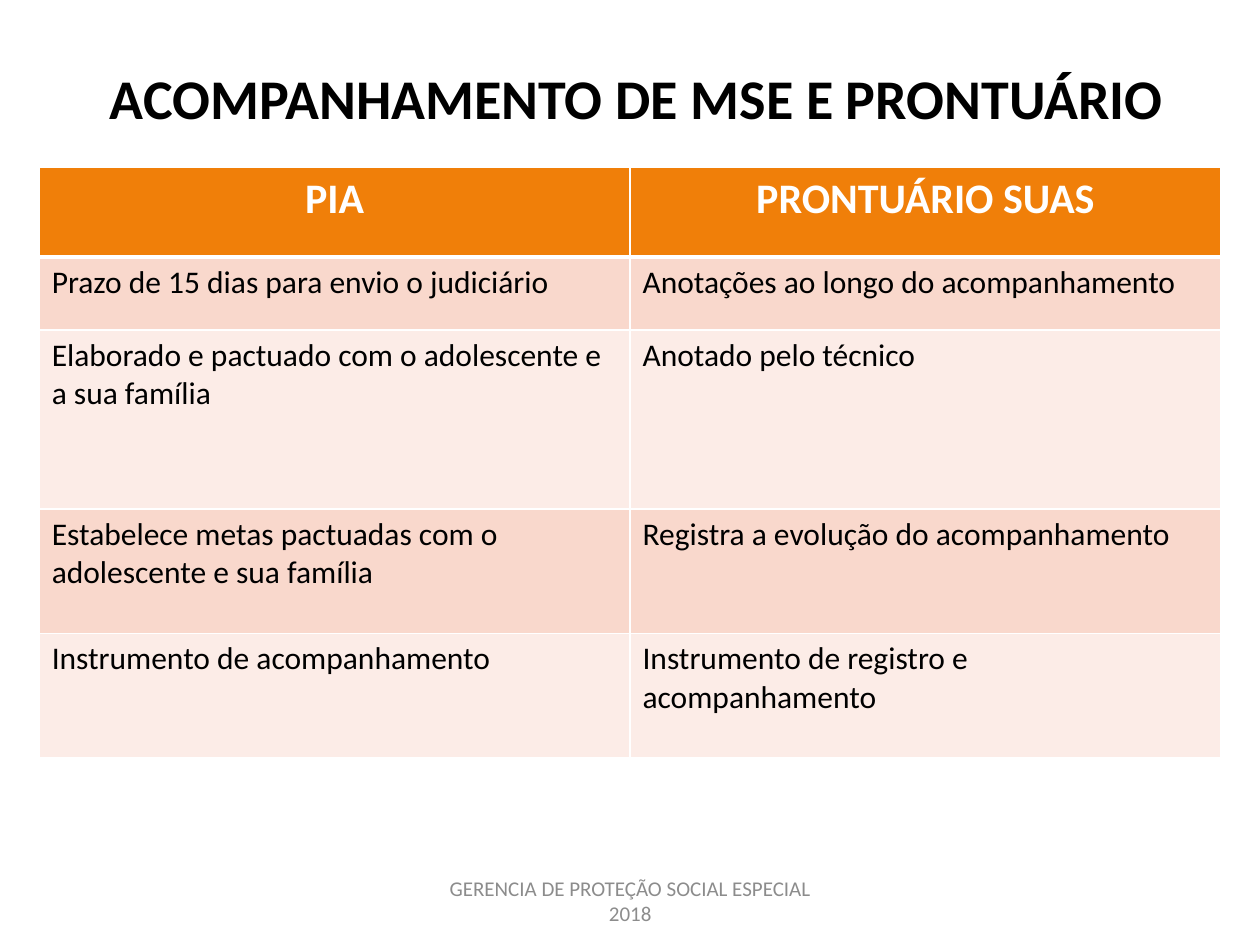
from lxml.etree import SubElement
from pptx import Presentation
from pptx.dml.color import RGBColor
from pptx.enum.text import MSO_ANCHOR, PP_ALIGN
from pptx.oxml.ns import qn
from pptx.util import Cm, Pt

FONT = "Calibri"
COLORS = {
    "black": "000000",
    "white": "FFFFFF",
    "orange": "F07F09",
    "band_dark": "F9D8CC",
    "band_light": "FCECE7",
    "gray": "8C8C8C",
}
ROWS = [
    ("PIA", "PRONTUÁRIO SUAS"),
    ("Prazo de 15 dias para envio o judiciário", "Anotações ao longo do acompanhamento"),
    ("Elaborado e pactuado com o adolescente e a sua família", "Anotado pelo técnico"),
    ("Estabelece metas pactuadas com o adolescente e sua família",
     "Registra a evolução do acompanhamento"),
    ("Instrumento de acompanhamento", "Instrumento de registro e acompanhamento"),
]
ROW_HEIGHTS = [1.8, 1.47, 3.61, 2.51, 2.51]


def style_paragraph(p, size, color, bold=False, align=PP_ALIGN.LEFT):
    """Set the font and alignment of a paragraph."""
    p.alignment = align
    p.font.name = FONT
    p.font.size = Pt(size)
    p.font.bold = bold
    p.font.color.rgb = RGBColor.from_string(COLORS[color])


def add_text(s, box, text, size, color, bold=False):
    """Add a centred line of text in the box (left, top, width, height in cm)."""
    tf = s.shapes.add_textbox(*map(Cm, box)).text_frame
    tf.word_wrap = True
    tf.vertical_anchor = MSO_ANCHOR.MIDDLE
    tf.text = text
    style_paragraph(tf.paragraphs[0], size, color, bold, PP_ALIGN.CENTER)


def set_borders(cell, widths):
    """Draw white cell borders with the given widths in points by side."""
    tc_pr = cell._tc.get_or_add_tcPr()
    for side, width in widths.items():
        ln = SubElement(tc_pr, qn(f"a:ln{side}"), w=str(Pt(width)))
        fill = SubElement(ln, qn("a:solidFill"))
        SubElement(fill, qn("a:srgbClr"), val=COLORS["white"])


def add_comparison_table(s, box):
    """Add the two-column comparison table with a header and banded rows."""
    table = s.shapes.add_table(len(ROWS), 2, *map(Cm, box)).table
    for i, (texts, height) in enumerate(zip(ROWS, ROW_HEIGHTS)):
        table.rows[i].height = Cm(height)
        header = i == 0
        fill = "orange" if header else "band_dark" if i % 2 else "band_light"
        widths = {"L": 1, "R": 1, "T": 3 if i == 1 else 1, "B": 3 if header else 1}
        for j, text in enumerate(texts):
            cell = table.cell(i, j)
            set_borders(cell, widths)
            cell.fill.solid()
            cell.fill.fore_color.rgb = RGBColor.from_string(COLORS[fill])
            cell.text = text
            p = cell.text_frame.paragraphs[0]
            if header:
                style_paragraph(p, 24, "white", True, PP_ALIGN.CENTER)
            else:
                style_paragraph(p, 18, "black")


def main():
    """Build the slide and save it."""
    prs = Presentation()
    prs.slide_width, prs.slide_height = Cm(25.4), Cm(19.05)
    s = prs.slides.add_slide(prs.slide_layouts[6])
    add_text(s, (1.27, 0.76, 23.14, 2.41), "ACOMPANHAMENTO DE MSE E PRONTUÁRIO",
             32, "black", True)
    add_comparison_table(s, (0.79, 3.38, 23.82, sum(ROW_HEIGHTS)))
    add_text(s, (8.68, 17.65, 8.05, 1.02), "GERENCIA DE PROTEÇÃO SOCIAL ESPECIAL 2018",
             12, "gray")
    prs.save("out.pptx")


if __name__ == "__main__":
    main()
